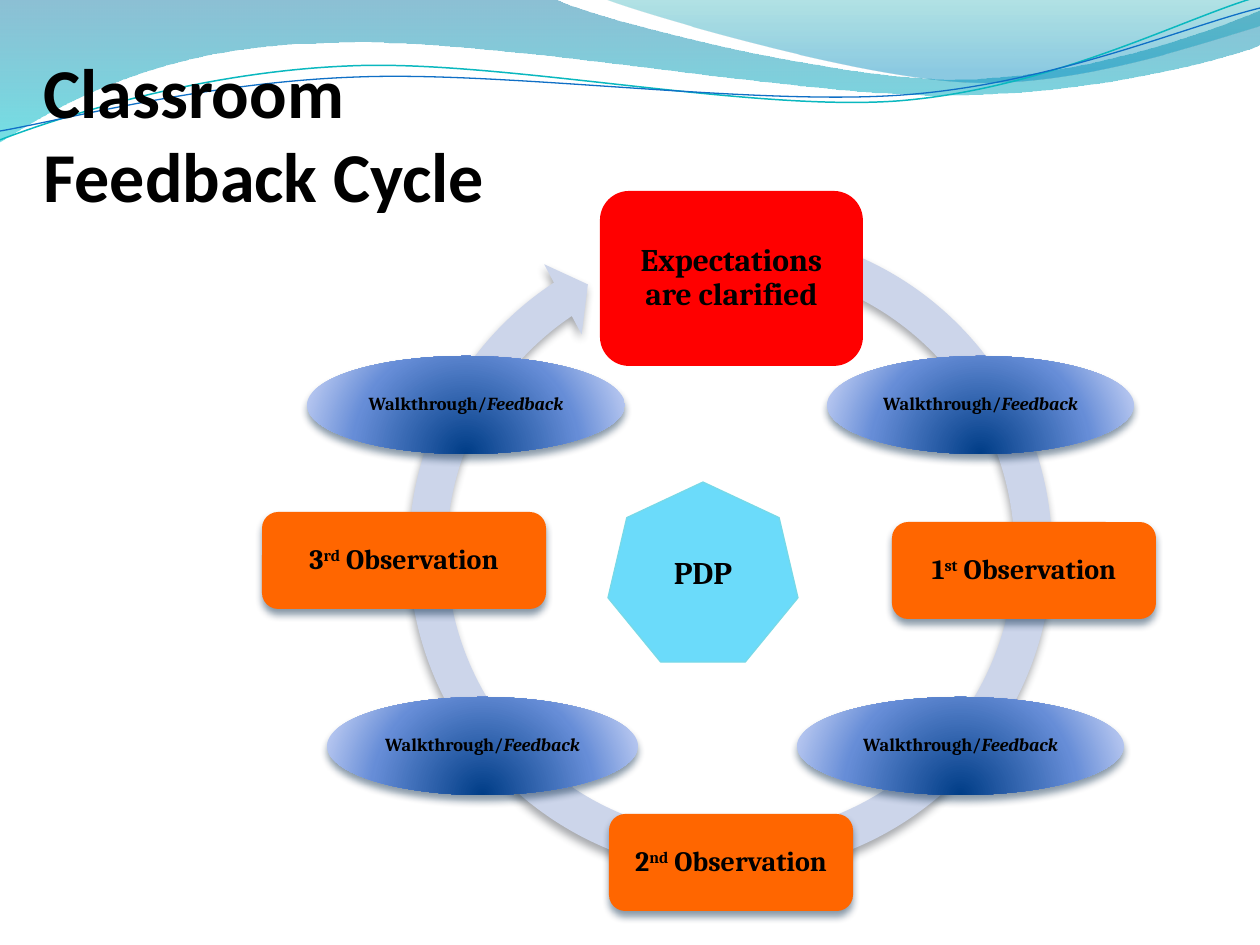
"""Build the classroom feedback cycle slide."""
import math
import lxml.etree
import pptx
import pptx.dml.color
import pptx.enum.shapes
import pptx.enum.text
import pptx.oxml.ns
import pptx.util

SCALE = 914400 / 126
TILT = 2.7
SHAPE = pptx.enum.shapes.MSO_SHAPE
ALIGN = pptx.enum.text.PP_ALIGN
ANCHOR = pptx.enum.text.MSO_ANCHOR
BLUE_GLOW = [(0, "003D87", 100), (68, "668DD7", 100), (100, "B3C4EF", 100)]
WAVES = [
    ([(0, 0), (554, -1), (600, 21, 837, 79, 955, 79), (1075, 79, 1207, 33, 1260, 11),
      (1261, 45), (1239, 55, 1096, 96, 940, 95), (784, 95, 481, 35, 324, 43),
      (163, 45, 58, 105, -1, 142), (0, 0)],
     [(0, "0074A1", 45), (100, "00C6CF", 55)]),
    ([(604, -1), (641, 14, 859, 78, 969, 82), (1079, 87, 1211, 40, 1260, 26), (1260, 0),
      (604, -1)],
     [(0, "00A1A9", 30), (80, "008BBF", 45)]),
]
RIPPLES = [
    ([(0, 140), (60, 117, 199, 72, 349, 66), (498, 59, 747, 112, 898, 101),
      (1050, 89, 1182, 19, 1257, -3)], (629, 72), "0AB8BF", 0.85),
    ([(0, 131), (59, 121, 207, 82, 357, 77), (508, 71, 752, 106, 903, 95),
      (1053, 84, 1186, 26, 1260, 8)], (629, 74), "0F6FC6", 0.75),
]
WALKTHROUGHS = [(827, 356, 307), (797, 697, 327), (327, 697, 311), (307, 356, 318)]
OBSERVATIONS = [(892, 522, 264, "1", "st"), (609, 814, 244, "2", "nd"), (262, 512, 284, "3", "rd")]


def px(length):
    """Turn px into EMU."""
    return pptx.util.Emu(round(length * SCALE))


def color(value):
    """Turn a hex string into a colour."""
    return pptx.dml.color.RGBColor.from_string(value)


def add_node(parent, tag, **attributes):
    """Add a drawing element to its parent."""
    texts = {name: str(value) for name, value in attributes.items()}
    return lxml.etree.SubElement(parent, pptx.oxml.ns.qn("a:" + tag), texts)


def add_tint(parent, value, opacity):
    """Add a colour with an opacity in percent."""
    tint = add_node(parent, "srgbClr", val=value)
    add_node(tint, "alpha", val=opacity * 1000)


def set_gradient(shape, stops, radial=False):
    """Fill a shape with a vertical or a radial gradient."""
    shape.fill.gradient()
    gradient = shape._element.spPr.find(pptx.oxml.ns.qn("a:gradFill"))
    for child in list(gradient):
        gradient.remove(child)
    stop_list = add_node(gradient, "gsLst")
    for position, value, opacity in stops:
        add_tint(add_node(stop_list, "gs", pos=position * 1000), value, opacity)
    if radial:
        circle = add_node(gradient, "path", path="circle")
        add_node(circle, "fillToRect", l=50000, t=130000, r=50000, b=-30000)
    else:
        add_node(gradient, "lin", ang=5400000, scaled=0)


def set_shadow(shape, value):
    """Give a shape a soft shadow below it."""
    effects = shape._element.spPr.find(pptx.oxml.ns.qn("a:effectLst"))
    shadow = add_node(effects, "outerShdw", blurRad=57150, dist=38100, dir=5400000,
                      algn="ctr", rotWithShape=0)
    add_tint(shadow, value, 48)


def turn(point, middle, degrees):
    """Turn a point clockwise around a middle."""
    angle = math.radians(degrees)
    x, y = point[0] - middle[0], point[1] - middle[1]
    return (middle[0] + x * math.cos(angle) - y * math.sin(angle),
            middle[1] + x * math.sin(angle) + y * math.cos(angle))


def add_outline(page, steps, closed, middle=(0, 0), tilt=0):
    """Add a freeform of lines and Bézier curves without a shadow."""
    points = [turn(step[index:index + 2], middle, tilt)
              for step in steps for index in range(0, len(step), 2)]
    corners = [(px(x), px(y)) for x, y in points]
    builder = page.shapes.build_freeform(*corners[0])
    builder.add_line_segments(corners[1:], close=closed)
    shape = builder.convert_to_shape()
    shape.shadow.inherit = False
    shape.rotation = -tilt % 360
    lines = shape._element.findall(".//" + pptx.oxml.ns.qn("a:lnTo"))
    for step in steps[1:]:
        segment = [lines.pop(0) for _ in range(len(step) // 2)]
        if len(segment) == 3:
            curve = lxml.etree.Element(pptx.oxml.ns.qn("a:cubicBezTo"))
            segment[0].addprevious(curve)
            for line in segment:
                curve.append(line[0])
                line.getparent().remove(line)
    return shape


def add_waves(page):
    """Add the wavy band along the top."""
    for steps, stops in WAVES:
        wave = add_outline(page, steps, True)
        set_gradient(wave, stops)
        wave.line.fill.background()
    for steps, middle, value, width in RIPPLES:
        ripple = add_outline(page, steps, False, middle, TILT)
        ripple.fill.background()
        ripple.line.color.rgb = color(value)
        ripple.line.width = pptx.util.Pt(width)


def add_figure(page, kind, place, fill=None, shadow=None):
    """Add a preset shape without an outline."""
    shape = page.shapes.add_shape(kind, *map(px, place))
    shape.shadow.inherit = False
    shape.line.fill.background()
    if fill:
        shape.fill.solid()
        shape.fill.fore_color.rgb = color(fill)
    if shadow:
        set_shadow(shape, shadow)
    return shape


def style_span(span, size, font):
    """Set the bold black type of a run."""
    span.font.size = pptx.util.Pt(size)
    span.font.name = font
    span.font.bold = True
    span.font.color.rgb = color("000000")


def set_label(shape, texts, size, margin=9, spacing=0.9):
    """Centre a label made of several runs and return the runs."""
    frame = shape.text_frame
    frame.word_wrap = True
    frame.vertical_anchor = ANCHOR.MIDDLE
    frame.margin_left = frame.margin_right = frame.margin_top = frame.margin_bottom = px(margin)
    para = frame.paragraphs[0]
    para.alignment = ALIGN.CENTER
    para.line_spacing = spacing
    spans = []
    for text in texts:
        span = para.add_run()
        span.text = text
        style_span(span, size, "Cambria")
        spans.append(span)
    return spans


def add_walkthrough(page, left, top, width):
    """Add a walkthrough ellipse."""
    ellipse = add_figure(page, SHAPE.OVAL, (left, top, width, 98), shadow="042747")
    set_gradient(ellipse, BLUE_GLOW, radial=True)
    spans = set_label(ellipse, ["Walkthrough/", "Feedback"], 10.5, margin=6)
    spans[1].font.italic = True


def add_observation(page, left, top, width, number, suffix):
    """Add an observation box with a raised ordinal suffix."""
    box = add_figure(page, SHAPE.ROUNDED_RECTANGLE, (left, top, width, 97), "FF6600", "042747")
    spans = set_label(box, [number, suffix, " Observation"], 16)
    spans[1]._r.get_or_add_rPr().set("baseline", "30000")


def set_title(page, text):
    """Place the title in front of the waves."""
    title = page.shapes.title
    title.left, title.top, title.width, title.height = map(px, (31, 42, 500, 183))
    frame = title.text_frame
    frame.text = text
    frame.word_wrap = True
    frame.auto_size = pptx.enum.text.MSO_AUTO_SIZE.NONE
    frame.vertical_anchor = ANCHOR.TOP
    frame.paragraphs[0].alignment = ALIGN.LEFT
    style_span(frame.paragraphs[0].runs[0], 40, "Calibri")
    page.shapes._spTree.append(title._element)


def main():
    """Build and save the deck."""
    deck = pptx.Presentation()
    deck.slide_width, deck.slide_height = px(1260), px(945)
    page = deck.slides.add_slide(deck.slide_layouts[5])
    add_waves(page)
    set_title(page, "Classroom Feedback Cycle")
    ring = add_figure(page, SHAPE.CIRCULAR_ARROW, (388, 209, 685, 685), "CCD5EA", "474B53")
    for index, value in enumerate((0.055, 3.307, 141.835, 171.426, 0.058)):
        ring.adjustments[index] = value
    start = add_figure(page, SHAPE.ROUNDED_RECTANGLE, (600, 191, 263, 175), "FF0000")
    set_label(start, ["Expectations are clarified"], 18)
    for walkthrough in WALKTHROUGHS:
        add_walkthrough(page, *walkthrough)
    for observation in OBSERVATIONS:
        add_observation(page, *observation)
    center = add_figure(page, SHAPE.HEPTAGON, (608, 482, 190, 180), "6BDBFA")
    center.line.color.rgb = color("77D9E8")
    center.line.width = pptx.util.Pt(0.75)
    set_label(center, ["PDP"], 18, spacing=1.0)
    deck.save("out.pptx")


if __name__ == "__main__":
    main()
